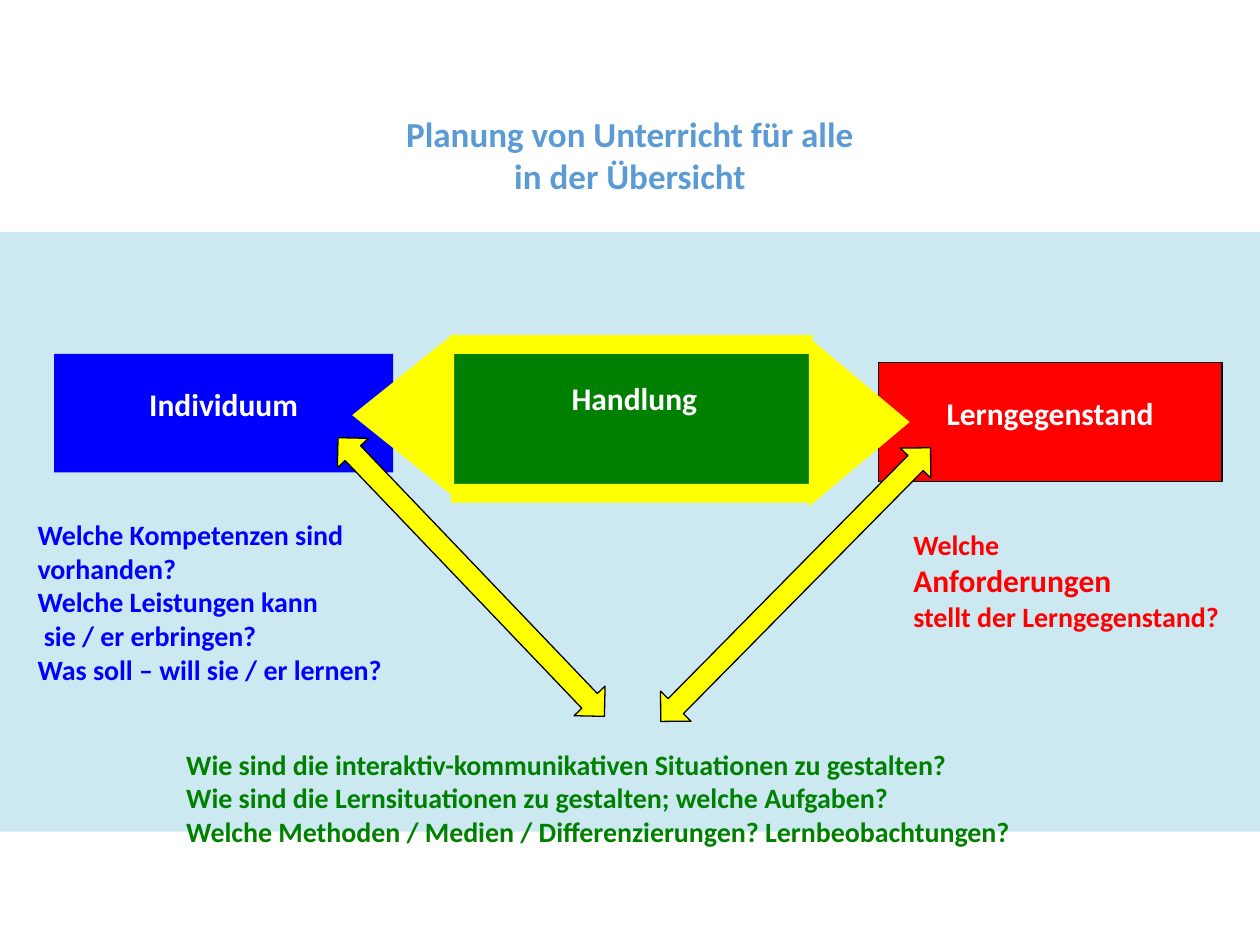
import dataclasses
import typing

import pptx
import pptx.dml.color
import pptx.enum.shapes
import pptx.enum.text
import pptx.util

Inches = pptx.util.Inches
Shapes = pptx.enum.shapes.MSO_SHAPE
Align = pptx.enum.text.PP_ALIGN
Anchor = pptx.enum.text.MSO_ANCHOR

FONT = "Calibri"
COLORS = {
    "band": "CCE9F2",
    "individual": "0000FF",
    "subject": "FF0000",
    "action": "008000",
    "arrow": "FFFF00",
    "outline": "000000",
    "label": "FFFFFF",
    "title": "5B9BD5",
}


@dataclasses.dataclass
class Figure:
    left: float
    top: float
    width: float
    height: float
    color: str
    kind: Shapes = Shapes.RECTANGLE
    label: str = ""
    outlined: bool = False
    rotation: float = 0


@dataclasses.dataclass
class Questions:
    left: float
    top: float
    width: float
    height: float
    color: str
    lines: list[str]
    sizes: typing.Optional[list[int]] = None
    wrap: bool = True


FIGURES = [
    # Background band and the two outer boxes
    Figure(0, 1.84, 10, 4.76, "band"),
    Figure(0.43, 2.81, 2.69, 0.94, "individual", label="Individuum"),
    Figure(6.97, 2.88, 2.73, 0.94, "subject", label="Lerngegenstand", outlined=True),
    # Middle box framed by a wide double arrow
    Figure(3.58, 2.76, 2.91, 1.15, "action", label="Handlung"),
    Figure(6.15, 2.95, 1.34, 0.8, "arrow", Shapes.ISOSCELES_TRIANGLE, rotation=90),
    Figure(3.58, 3.84, 2.87, 0.15, "arrow"),
    Figure(3.58, 2.66, 2.87, 0.15, "arrow"),
    Figure(2.55, 2.89, 1.3, 0.81, "arrow", Shapes.ISOSCELES_TRIANGLE, rotation=270),
    # Diagonal double arrows
    Figure(4.79, 4.47, 3.05, 0.34, "arrow", Shapes.LEFT_RIGHT_ARROW,
           outlined=True, rotation=314.6),
    Figure(2.21, 4.41, 3.06, 0.34, "arrow", Shapes.LEFT_RIGHT_ARROW,
           outlined=True, rotation=46.3),
]

QUESTIONS = [
    Questions(0.2, 4.06, 4.3, 1.45, "individual", [
        "Welche Kompetenzen sind",
        "vorhanden?",
        "Welche Leistungen kann",
        " sie / er erbringen?",
        "Was soll – will sie / er lernen?",
    ]),
    Questions(7.15, 4.14, 2.65, 0.94, "subject", [
        "Welche",
        "Anforderungen",
        "stellt der Lerngegenstand?",
    ], sizes=[16, 18, 16]),
    Questions(1.38, 5.88, 6.83, 0.91, "action", [
        "Wie sind die interaktiv-kommunikativen Situationen zu gestalten?",
        "Wie sind die Lernsituationen zu gestalten; welche Aufgaben?",
        "Welche Methoden / Medien / Differenzierungen? Lernbeobachtungen?",
    ], wrap=False),
]


def rgb(name: str) -> pptx.dml.color.RGBColor:
    return pptx.dml.color.RGBColor.from_string(COLORS[name])


def write_lines(text_frame, lines: list[str], sizes: list[int], color: str,
                alignment: Align) -> None:
    """Fill a text frame with one bold paragraph per line."""
    text_frame.text = "\n".join(lines)
    text_frame.vertical_anchor = Anchor.TOP
    for paragraph, size in zip(text_frame.paragraphs, sizes):
        paragraph.alignment = alignment
        paragraph.font.name = FONT
        paragraph.font.size = pptx.util.Pt(size)
        paragraph.font.bold = True
        paragraph.font.color.rgb = rgb(color)


def draw_figure(slide, figure: Figure) -> None:
    shape = slide.shapes.add_shape(
        figure.kind, Inches(figure.left), Inches(figure.top),
        Inches(figure.width), Inches(figure.height))
    shape.shadow.inherit = False
    shape.rotation = figure.rotation
    shape.fill.solid()
    shape.fill.fore_color.rgb = rgb(figure.color)
    if figure.outlined:
        shape.line.color.rgb = rgb("outline")
        shape.line.width = pptx.util.Pt(0.75)
    else:
        shape.line.fill.background()
    if figure.label:
        shape.text_frame.margin_top = Inches(0.25)
        write_lines(shape.text_frame, [figure.label], [18], "label", Align.CENTER)


def draw_questions(slide, questions: Questions) -> None:
    box = slide.shapes.add_textbox(
        Inches(questions.left), Inches(questions.top),
        Inches(questions.width), Inches(questions.height))
    box.text_frame.word_wrap = questions.wrap
    sizes = questions.sizes or [16] * len(questions.lines)
    write_lines(box.text_frame, questions.lines, sizes, questions.color, Align.LEFT)


def set_title(slide) -> None:
    title = slide.shapes.title
    title.left, title.top = Inches(2.6), Inches(0.84)
    title.width, title.height = Inches(4.8), Inches(0.77)
    title.text_frame.auto_size = pptx.enum.text.MSO_AUTO_SIZE.NONE
    write_lines(title.text_frame,
                ["Planung von Unterricht für alle", "in der Übersicht"],
                [20, 20], "title", Align.CENTER)


def main() -> None:
    presentation = pptx.Presentation()
    presentation.slide_width = Inches(10)
    presentation.slide_height = Inches(7.5)
    slide = presentation.slides.add_slide(
        presentation.slide_layouts.get_by_name("Title Only"))

    set_title(slide)
    for figure in FIGURES:
        draw_figure(slide, figure)
    for questions in QUESTIONS:
        draw_questions(slide, questions)

    presentation.save("out.pptx")


if __name__ == "__main__":
    main()
